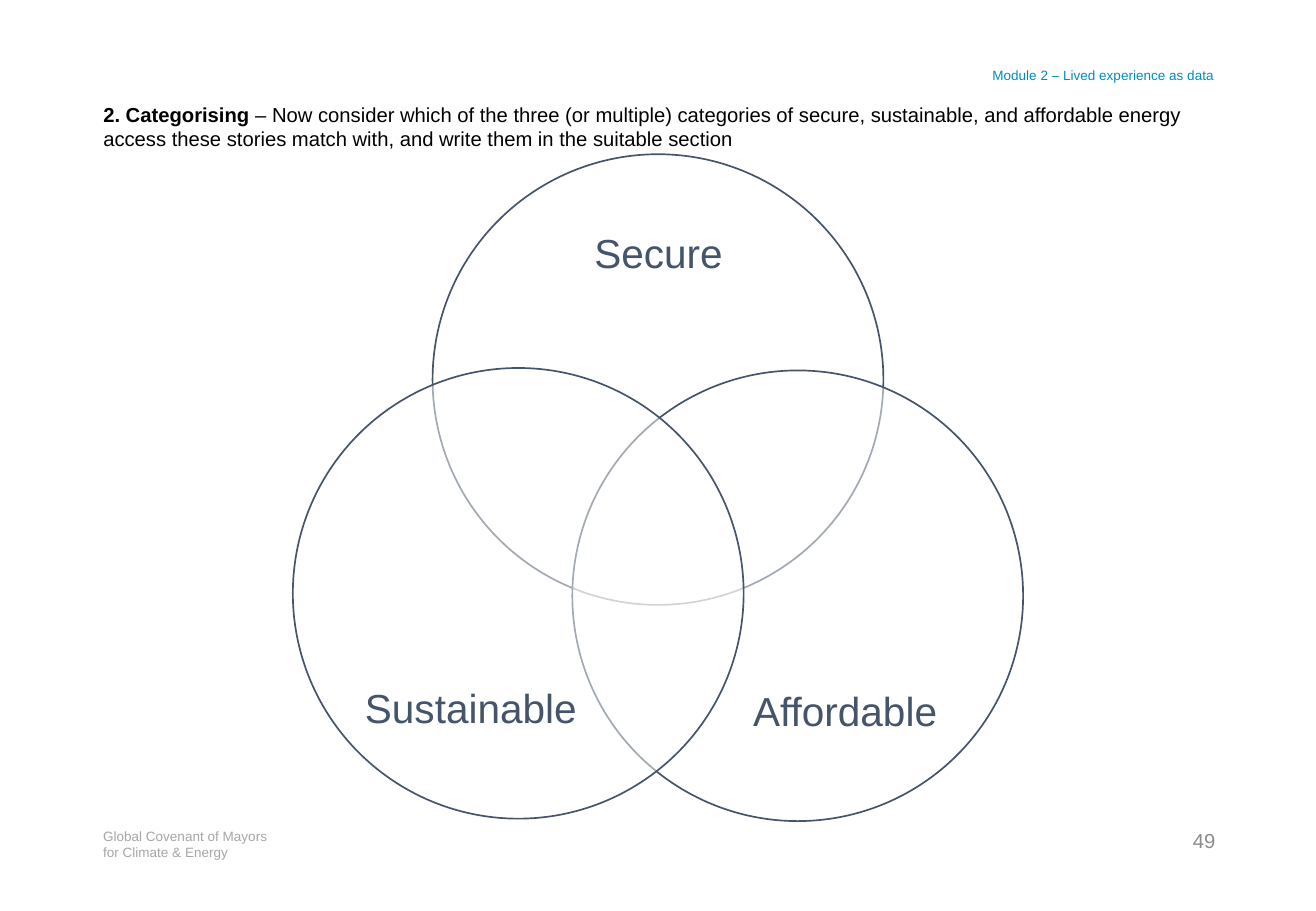
"""Builds the energy access categorising slide with its three-circle diagram."""
from lxml import etree
from pptx import Presentation
from pptx.dml.color import RGBColor
from pptx.enum.shapes import MSO_SHAPE
from pptx.enum.text import MSO_ANCHOR, MSO_AUTO_SIZE, PP_ALIGN
from pptx.oxml.ns import qn
from pptx.util import Pt

OVAL = MSO_SHAPE.OVAL
TOP, MIDDLE, BOTTOM = MSO_ANCHOR.TOP, MSO_ANCHOR.MIDDLE, MSO_ANCHOR.BOTTOM
LEFT, CENTER, RIGHT = PP_ALIGN.LEFT, PP_ALIGN.CENTER, PP_ALIGN.RIGHT
NO_AUTOFIT = MSO_AUTO_SIZE.NONE

FONT = "Arial"
BLACK = RGBColor(0x00, 0x00, 0x00)
WHITE = RGBColor(0xFF, 0xFF, 0xFF)
SLATE = RGBColor(0x44, 0x54, 0x6A)
BLUE = RGBColor(0x00, 0x8C, 0xBE)
FOOTER_GREY = RGBColor(0xA6, 0xA6, 0xA6)
NUMBER_GREY = RGBColor(0x8C, 0x8C, 0x8C)

TITLE = [
    ("2. Categorising ", True),
    ("– Now consider which of the three (or multiple) categories of secure, "
     "sustainable, and affordable energy access these stories match with, "
     "and write them in the suitable section", False),
]
TITLE_BOX = (54, 54, 671.76, 41.76)

DIAMETER = 267.12
CIRCLES = [
    ("Secure", (256.32, 91.44), (292.32, 138.24, 195.84, 120.24), TOP),
    ("Affordable", (339.12, 219.6), (420.48, 288.72, 160.56, 146.88), BOTTOM),
    ("Sustainable", (173.52, 218.16), (198.72, 287.28, 160.56, 146.88), BOTTOM),
]

SMALL_TEXTS = [
    (["Global Covenant of Mayors", "for Climate & Energy"],
     (54, 487.44, 131.76, 28.8), 8, FOOTER_GREY, LEFT, TOP),
    (["49"], (689.76, 487.44, 37.44, 28.8), 12, NUMBER_GREY, RIGHT, TOP),
    (["Module 2 – Lived experience as data"],
     (480.24, 36, 246.24, 17.28), 8, BLUE, RIGHT, BOTTOM),
]


def add_run(p, text, size, color, bold=False):
    r = p.add_run()
    r.text = text
    r.font.name = FONT
    r.font.size = Pt(size)
    r.font.bold = bold
    r.font.color.rgb = color


def set_frame(tf, anchor, align):
    tf.word_wrap = True
    tf.auto_size = NO_AUTOFIT
    tf.vertical_anchor = anchor
    p = tf.paragraphs[0]
    p.alignment = align
    return p


def add_text(s, lines, box, size, color, align, anchor, inset=None):
    tf = s.shapes.add_textbox(*map(Pt, box)).text_frame
    p = set_frame(tf, anchor, align)
    if inset is not None:
        tf.margin_left = tf.margin_right = Pt(inset)
        tf.margin_top = tf.margin_bottom = Pt(inset)
    for i, line in enumerate(lines):
        if i:
            p.add_line_break()
        add_run(p, line, size, color)
    return p


def add_title(s):
    sp = s.shapes.title
    sp.left, sp.top, sp.width, sp.height = map(Pt, TITLE_BOX)
    p = set_frame(sp.text_frame, MIDDLE, LEFT)
    for text, bold in TITLE:
        add_run(p, text, 12, BLACK, bold)


def add_circle(s, label, corner, label_box, anchor):
    sp = s.shapes.add_shape(OVAL, *map(Pt, (*corner, DIAMETER, DIAMETER)))
    sp.shadow.inherit = False
    sp.fill.solid()
    sp.fill.fore_color.rgb = WHITE
    color = sp.fill._xPr.find(qn("a:solidFill"))[0]
    etree.SubElement(color, qn("a:alpha")).set("val", "50000")
    sp.line.color.rgb = SLATE
    sp.line.width = Pt(1)
    p = add_text(s, [label], label_box, 24, SLATE, CENTER, anchor, inset=0)
    p.line_spacing = 0.9


def main():
    prs = Presentation()
    prs.slide_width, prs.slide_height = Pt(779.76), Pt(540)
    s = prs.slides.add_slide(prs.slide_layouts[5])
    add_title(s)
    for circle in CIRCLES:
        add_circle(s, *circle)
    for item in SMALL_TEXTS:
        p = add_text(s, *item)
        if item[-1] == BOTTOM:
            p.line_spacing = 0.9
    prs.save("out.pptx")


if __name__ == "__main__":
    main()
